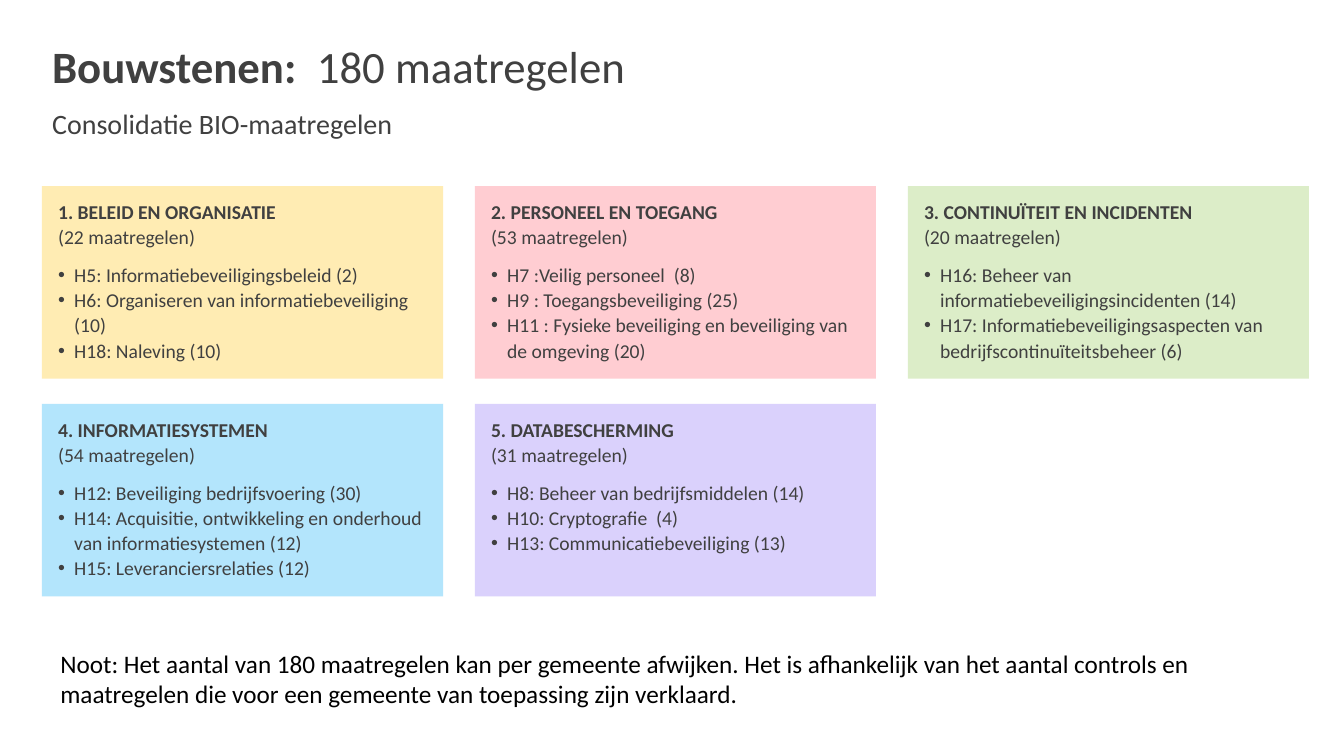
from lxml import etree
from pptx import Presentation
from pptx.dml.color import RGBColor
from pptx.enum.shapes import MSO_SHAPE
from pptx.enum.text import MSO_ANCHOR, MSO_AUTO_SIZE, PP_ALIGN
from pptx.oxml.ns import qn
from pptx.util import Pt

RECTANGLE = MSO_SHAPE.RECTANGLE
TOP = MSO_ANCHOR.TOP
NO_AUTOFIT = MSO_AUTO_SIZE.NONE
LEFT = PP_ALIGN.LEFT
TITLE_ONLY = 5
FONT = "Calibri"
COLORS = {
    "text": "404040",
    "note": "000000",
    "yellow": "FFECB3",
    "pink": "FFCDD2",
    "green": "DCEDC8",
    "blue": "B3E5FC",
    "purple": "DAD1FC",
}
COLUMNS = 3
COLUMN_PITCH, ROW_PITCH = 309.25, 155.5
THEMES = [
    ("yellow", "1. BELEID EN ORGANISATIE", "(22 maatregelen)", [
        "H5: Informatiebeveiligingsbeleid (2)",
        "H6: Organiseren van informatiebeveiliging (10)",
        "H18: Naleving (10)"]),
    ("pink", "2. PERSONEEL EN TOEGANG", "(53 maatregelen)", [
        "H7 :Veilig personeel  (8)",
        "H9 : Toegangsbeveiliging (25)",
        "H11 : Fysieke beveiliging en beveiliging van de omgeving (20)"]),
    ("green", "3. CONTINUÏTEIT EN INCIDENTEN", "(20 maatregelen)", [
        "H16: Beheer van informatiebeveiligingsincidenten (14)",
        "H17: Informatiebeveiligingsaspecten van bedrijfscontinuïteitsbeheer (6)"]),
    ("blue", "4. INFORMATIESYSTEMEN", "(54 maatregelen)", [
        "H12: Beveiliging bedrijfsvoering (30)",
        "H14: Acquisitie, ontwikkeling en onderhoud van informatiesystemen (12)",
        "H15: Leveranciersrelaties (12)"]),
    ("purple", "5. DATABESCHERMING", "(31 maatregelen)", [
        "H8: Beheer van bedrijfsmiddelen (14)",
        "H10: Cryptografie  (4)",
        "H13: Communicatiebeveiliging (13)"]),
]
NOTE = ("Noot: Het aantal van 180 maatregelen kan per gemeente afwijken. "
        "Het is afhankelijk van het aantal controls en maatregelen die voor "
        "een gemeente van toepassing zijn verklaard.")


def format_run(run, size, color="text", bold=False):
    """Give a run its font, size, colour and weight."""
    run.font.name = FONT
    run.font.size = Pt(size)
    run.font.bold = bold
    run.font.color.rgb = RGBColor.from_string(COLORS[color])


def add_bullet(paragraph, indent):
    """Turn a paragraph into a bulleted line with a hanging indent."""
    properties = paragraph._p.get_or_add_pPr()
    properties.set("marL", str(Pt(indent)))
    properties.set("indent", str(-Pt(indent)))
    etree.SubElement(properties, qn("a:buFont"), typeface="Arial")
    etree.SubElement(properties, qn("a:buChar"), char="•")


def build_heading(slide, left, top, width, height):
    """Fill the title placeholder with the title and its subtitle."""
    heading = slide.shapes.title
    heading.left, heading.top = Pt(left), Pt(top)
    heading.width, heading.height = Pt(width), Pt(height)
    frame = heading.text_frame
    frame.vertical_anchor = TOP
    frame.auto_size = NO_AUTOFIT
    line = frame.paragraphs[0]
    line.text = "Bouwstenen:"
    line.alignment = LEFT
    line.line_spacing = Pt(34)
    format_run(line.runs[0], 32, bold=True)
    count = line.add_run()
    count.text = "  180 maatregelen"
    format_run(count, 32)
    line.add_line_break()
    subtitle = line.add_run()
    subtitle.text = "Consolidatie BIO-maatregelen"
    format_run(subtitle, 20)


def build_theme(slide, left, top, width, height, theme):
    """Draw one coloured block with its name, count and chapters."""
    color, name, count, chapters = theme
    block = slide.shapes.add_shape(RECTANGLE, Pt(left), Pt(top), Pt(width), Pt(height))
    block.shadow.inherit = False
    block.fill.solid()
    block.fill.fore_color.rgb = RGBColor.from_string(COLORS[color])
    block.line.fill.background()
    frame = block.text_frame
    frame.word_wrap = True
    frame.vertical_anchor = TOP
    frame.margin_left = frame.margin_right = frame.margin_bottom = Pt(11.5)
    frame.margin_top = Pt(8.65)
    frame.text = "\n".join([f"{name}\v{count}", *chapters])
    for paragraph in frame.paragraphs:
        paragraph.alignment = LEFT
        paragraph.line_spacing = Pt(18)
        for run in paragraph.runs:
            format_run(run, 14)
    caption, *items = frame.paragraphs
    caption.space_after = Pt(9)
    caption.runs[0].font.bold = True
    for item in items:
        add_bullet(item, 11.5)


def build_themes(slide, left, top, width, height):
    """Lay the theme blocks out in a grid, row by row."""
    for index, theme in enumerate(THEMES):
        row, column = divmod(index, COLUMNS)
        build_theme(slide, left + column * COLUMN_PITCH, top + row * ROW_PITCH,
                    width, height, theme)


def build_note(slide, left, top, width, height):
    """Write the closing note."""
    note = slide.shapes.add_textbox(Pt(left), Pt(top), Pt(width), Pt(height))
    frame = note.text_frame
    frame.word_wrap = True
    frame.text = NOTE
    format_run(frame.paragraphs[0].runs[0], 18, "note")


def main():
    """Build the slide and save it."""
    deck = Presentation()
    deck.slide_width, deck.slide_height = Pt(960), Pt(540)
    slide = deck.slides.add_slide(deck.slide_layouts[TITLE_ONLY])
    build_heading(slide, 30, 28.8, 828, 86.4)
    build_themes(slide, 30, 133, 286.5, 137.5)
    build_note(slide, 36, 459.4, 865, 51)
    deck.save("out.pptx")


if __name__ == "__main__":
    main()
